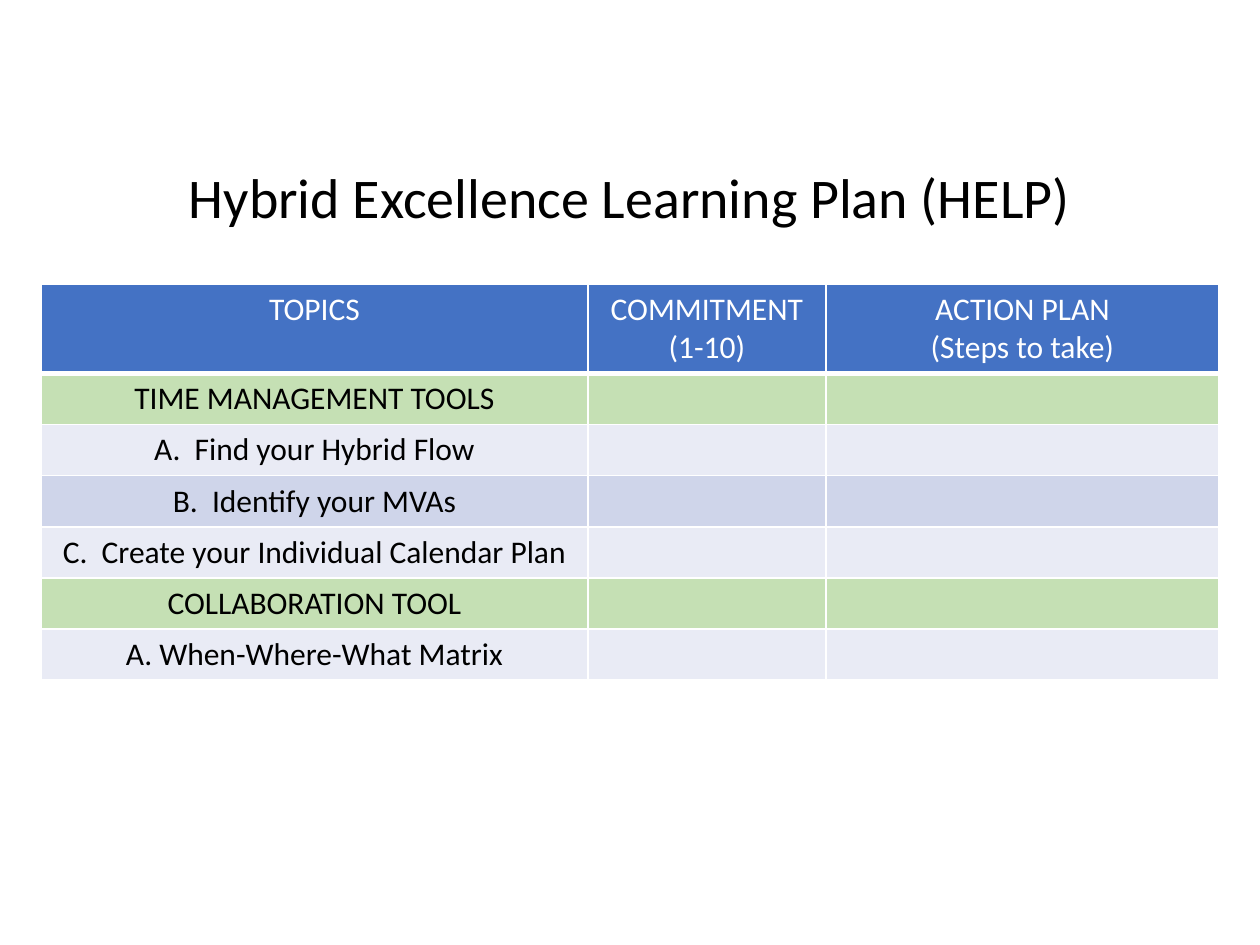
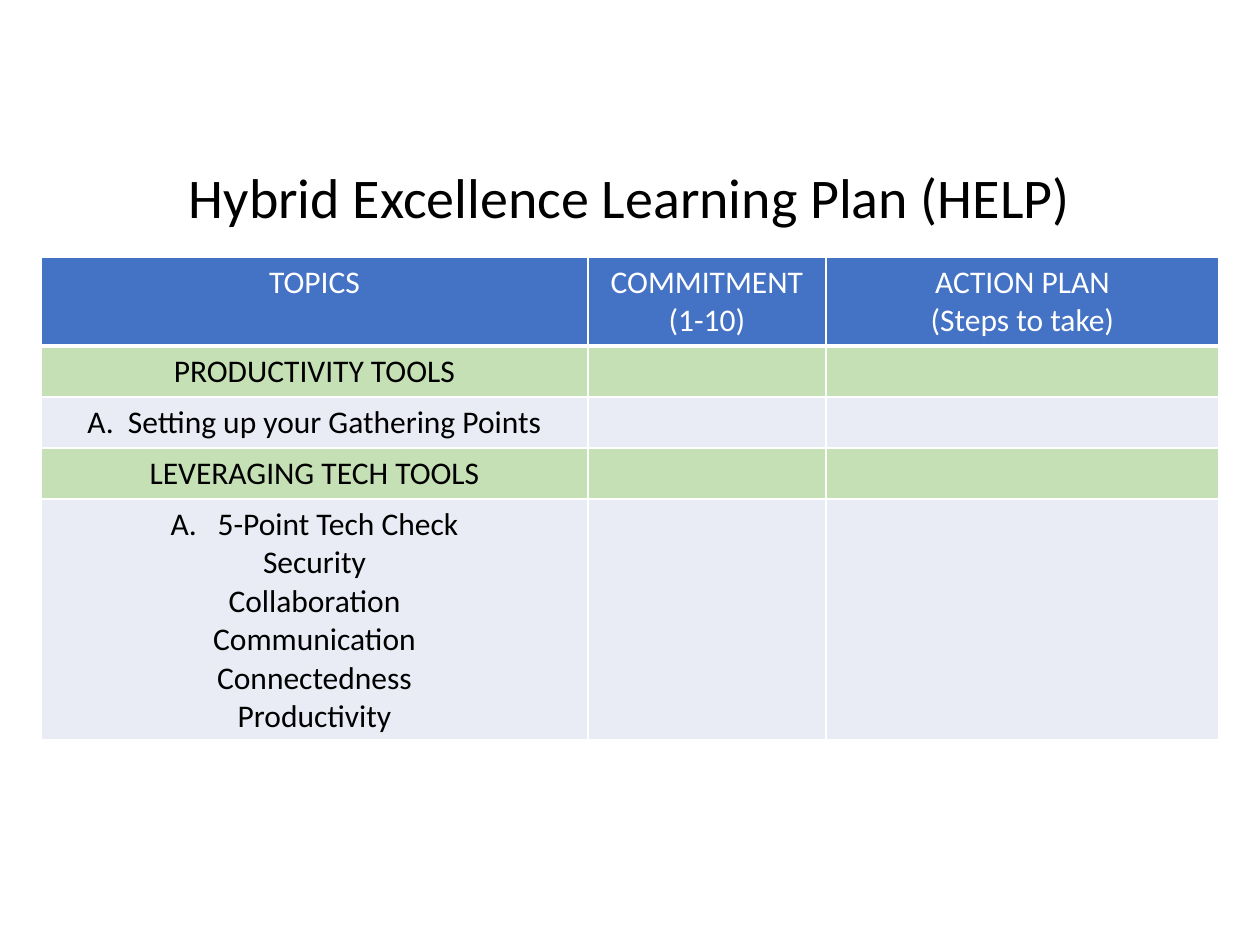
from pptx import Presentation
from pptx import util as u
from pptx.dml.color import RGBColor
from pptx.enum import text
from pptx.oxml.xmlchemy import OxmlElement

PX = 914400 / 126  # EMU in one px
FONT = "Calibri"
WHITE = RGBColor(0xFF, 0xFF, 0xFF)
BLACK = RGBColor(0, 0, 0)
BLUE = RGBColor(0x44, 0x72, 0xC4)
GREEN = RGBColor(0xC5, 0xE0, 0xB4)
BANDS = [RGBColor(0xE9, 0xEB, 0xF5), RGBColor(0xCF, 0xD5, 0xEA)]

TITLE = "Hybrid Excellence Learning Plan (HELP)"
TITLE_FONT = {"name": FONT, "size": u.Pt(32)}
CELL_FONT = {"name": FONT, "size": u.Pt(18), "bold": False}
HEADER = ["TOPICS", "COMMITMENT\n(1-10)", "ACTION PLAN\n(Steps to take)"]
TABLE_LEFT = 41
COL_WIDTHS = [547, 238, 393]
LINE_HEIGHT, CELL_PADDING = 38, 13
LIST_INDENT = 47

# Each slide: table top, then sections of (heading, topics, numbered)
SLIDES = [
    (284, [
        ("TIME MANAGEMENT TOOLS",
         ["A.  Find your Hybrid Flow", "B.  Identify your MVAs",
          "C.  Create your Individual Calendar Plan"], False),
        ("COLLABORATION TOOL", ["A. When-Where-What Matrix"], False),
    ]),
    (257, [
        ("PRODUCTIVITY TOOLS", ["A.  Setting up your Gathering Points"], False),
        ("LEVERAGING TECH TOOLS",
         ["5-Point Tech Check\nSecurity\nCollaboration\n"
          "Communication\nConnectedness\nProductivity"], True),
    ]),
]


def px(n):
    return u.Emu(round(n * PX))


def write(tf, content, font, color):
    """Fill a text frame with centred lines, one paragraph each."""
    for i, line in enumerate(content.split("\n")):
        p = tf.paragraphs[0] if i == 0 else tf.add_paragraph()
        p.alignment = text.PP_ALIGN.CENTER
        r = p.add_run()
        r.text = line
        for key, value in font.items():
            setattr(r.font, key, value)
        r.font.color.rgb = color


def number_paragraph(p):
    """Give a paragraph an automatic capital letter."""
    pPr = p._p.get_or_add_pPr()
    pPr.set("marL", str(px(LIST_INDENT)))
    pPr.set("indent", str(-px(LIST_INDENT)))
    number = OxmlElement("a:buAutoNum")
    number.set("type", "alphaUcPeriod")
    pPr.append(number)


def add_borders(cell, bottom):
    tcPr = cell._tc.get_or_add_tcPr()
    for side, width in {"L": 1, "R": 1, "T": 1, "B": bottom}.items():
        ln = OxmlElement(f"a:ln{side}")
        ln.set("w", str(u.Pt(width)))
        fill = OxmlElement("a:solidFill")
        color = OxmlElement("a:srgbClr")
        color.set("val", str(WHITE))
        fill.append(color)
        ln.append(fill)
        tcPr.append(ln)


def add_title(slide):
    sp = slide.shapes.add_textbox(px(83), px(156), px(1094), px(81))
    sp.text_frame.word_wrap = True
    write(sp.text_frame, TITLE, TITLE_FONT, BLACK)


def table_rows(sections):
    """List the rows as (texts, fill, text colour, numbered)."""
    rows = [(HEADER, BLUE, WHITE, False)]
    for heading, topics, numbered in sections:
        rows.append(([heading, "", ""], GREEN, BLACK, False))
        for i, topic in enumerate(topics):
            rows.append(([topic, "", ""], BANDS[i % 2], BLACK, numbered))
    return rows


def add_plan_table(slide, top, sections):
    rows = table_rows(sections)
    heights = [CELL_PADDING + LINE_HEIGHT * max(t.count("\n") + 1 for t in texts)
               for texts, *_ in rows]
    table = slide.shapes.add_table(
        len(rows), len(COL_WIDTHS), px(TABLE_LEFT), px(top),
        px(sum(COL_WIDTHS)), px(sum(heights))).table
    table.horz_banding = False
    for column, width in zip(table.columns, COL_WIDTHS):
        column.width = px(width)

    for i, (texts, fill, color, numbered) in enumerate(rows):
        table.rows[i].height = px(heights[i])
        for cell, content in zip(table.rows[i].cells, texts):
            add_borders(cell, 3 if i == 0 else 1)
            cell.fill.solid()
            cell.fill.fore_color.rgb = fill
            if content:
                write(cell.text_frame, content, CELL_FONT, color)
        if numbered:
            number_paragraph(table.cell(i, 0).text_frame.paragraphs[0])


def main():
    prs = Presentation()
    prs.slide_width, prs.slide_height = px(1260), px(945)
    for top, sections in SLIDES:
        slide = prs.slides.add_slide(prs.slide_layouts[6])
        add_plan_table(slide, top, sections)
        add_title(slide)
    prs.save("out.pptx")


if __name__ == "__main__":
    main()
